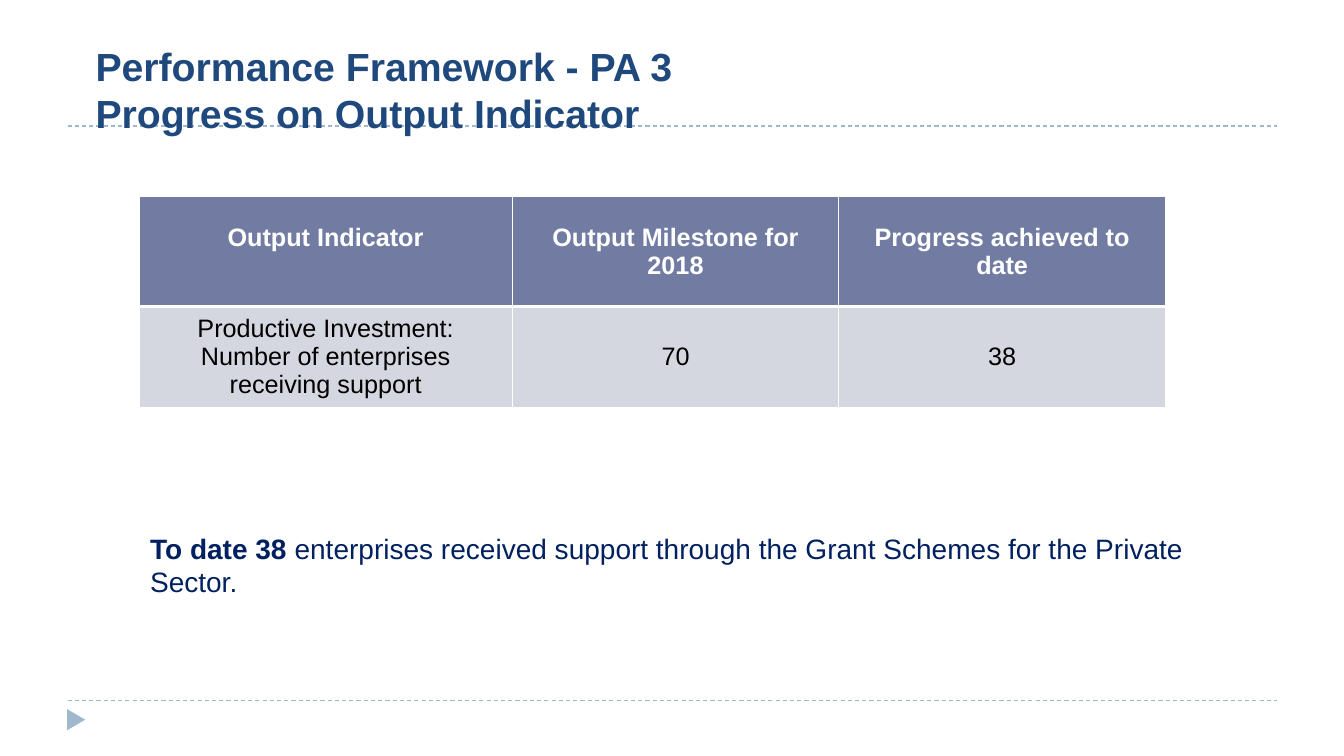
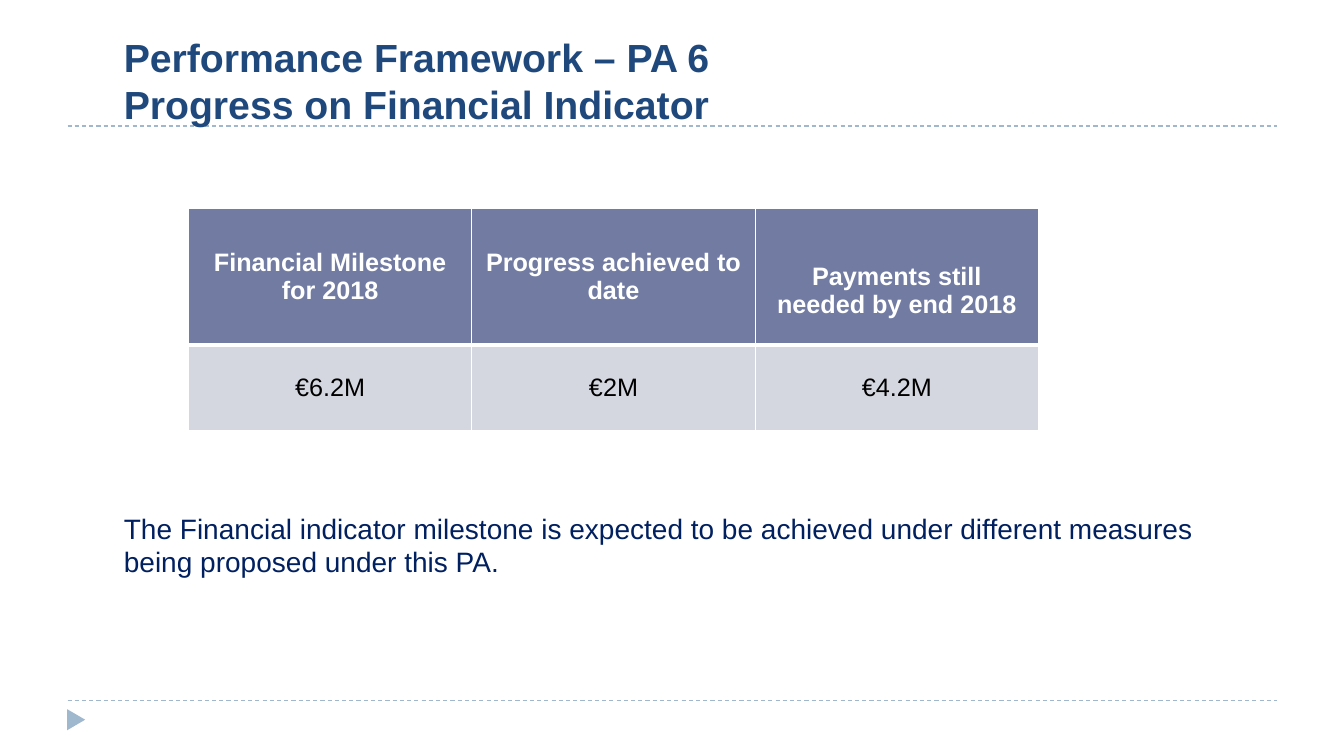
from dataclasses import dataclass

from lxml import etree
from pptx import Presentation
from pptx.dml.color import RGBColor
from pptx.enum import dml, shapes, text
from pptx.oxml import ns
from pptx.util import Inches, Pt


@dataclass(frozen=True)
class Theme:
    """Colours, font and type sizes shared by the slides."""
    font: str = "Arial"
    title: str = "1F497D"
    note: str = "002060"
    accent: str = "9FB8CD"
    header: str = "727CA3"
    row: str = "D5D7E0"
    white: str = "FFFFFF"
    black: str = "000000"
    title_size: int = 28
    note_size: int = 20
    table_size: int = 18


THEME = Theme()


def rgb(colour):
    """Turn a hex string into a colour."""
    return RGBColor.from_string(colour)


def style(paragraph, size, colour, bold=None):
    """Set the font of a whole paragraph."""
    font = paragraph.font
    font.name, font.size, font.bold = THEME.font, Pt(size), bold
    font.color.rgb = rgb(colour)


def add_rule(slide, y):
    """Draw a dashed rule across the slide."""
    rule = slide.shapes.add_connector(
        shapes.MSO_CONNECTOR.STRAIGHT,
        Inches(0.67), Inches(y), Inches(12.67), Inches(y))
    rule.line.color.rgb = rgb(THEME.accent)
    rule.line.width = Pt(0.75)
    rule.line.dash_style = dml.MSO_LINE.DASH
    etree.SubElement(rule._element.spPr, ns.qn("a:effectLst"))


def add_frame(slide):
    """Draw the rules and the corner marker that every slide has."""
    for y in (6.95, 1.25):
        add_rule(slide, y)
    marker = slide.shapes.add_shape(
        shapes.MSO_SHAPE.ISOSCELES_TRIANGLE,
        Inches(0.65), Inches(7.05), Inches(0.21), Inches(0.18))
    marker.rotation = 90
    marker.shadow.inherit = False
    marker.fill.solid()
    marker.fill.fore_color.rgb = rgb(THEME.accent)
    marker.line.fill.background()


def add_text(slide, box, anchor=text.MSO_ANCHOR.TOP):
    """Add a wrapping text box and return its first paragraph."""
    frame = slide.shapes.add_textbox(*map(Inches, box)).text_frame
    frame.word_wrap = True
    frame.vertical_anchor = anchor
    return frame.paragraphs[0]


def add_title(slide, box, subject, topic):
    """Add the two-line title."""
    title = add_text(slide, box, text.MSO_ANCHOR.BOTTOM)
    title.add_run().text = subject
    title.add_line_break()
    title.add_run().text = topic
    style(title, THEME.title_size, THEME.title, True)


def add_note(slide, box, body, lead=""):
    """Add the closing remark, with an optional bold lead."""
    note = add_text(slide, box)
    if lead:
        opening = note.add_run()
        opening.text = lead
        opening.font.bold = True
    note.add_run().text = body
    style(note, THEME.note_size, THEME.note)


def set_borders(cell, **widths):
    """Give a cell white borders, with widths in points by side."""
    properties = cell._tc.get_or_add_tcPr()
    for position, side in enumerate("LRTB"):
        border = etree.Element(
            ns.qn(f"a:ln{side}"), w=str(Pt(widths.get(side, 1))))
        fill = etree.SubElement(border, ns.qn("a:solidFill"))
        etree.SubElement(fill, ns.qn("a:srgbClr"), val=THEME.white)
        properties.insert(position, border)


def add_indicators(slide, left, top, widths, heights, rows):
    """Add a table with a header row and return it."""
    table = slide.shapes.add_table(
        len(rows), len(widths), Inches(left), Inches(top),
        Inches(sum(widths)), Inches(sum(heights))).table
    table.horz_banding = False
    for column, width in zip(table.columns, widths):
        column.width = Inches(width)
    for index, (row, height, values) in enumerate(zip(table.rows, heights, rows)):
        row.height = Inches(height)
        is_header = index == 0
        for cell, value in zip(row.cells, values):
            cell.text = value
            cell.vertical_anchor = text.MSO_ANCHOR.MIDDLE
            cell.fill.solid()
            cell.fill.fore_color.rgb = rgb(THEME.header if is_header else THEME.row)
            set_borders(cell, **({"B": 3} if is_header else {"T": 3}))
            label = cell.text_frame.paragraphs[0]
            label.alignment = text.PP_ALIGN.CENTER
            style(label, THEME.table_size,
                  THEME.white if is_header else THEME.black, is_header)
    return table


def add_slide(deck):
    """Add a blank slide with the shared frame."""
    slide = deck.slides.add_slide(deck.slide_layouts[6])
    add_frame(slide)
    return slide


def build_output(deck):
    """Build the slide on the output indicator."""
    slide = add_slide(deck)
    add_title(slide, (0.85, 0.94, 7.83, 0.46),
              "Performance Framework - PA 3", "Progress on Output Indicator")
    table = add_indicators(
        slide, 1.38, 1.95, (3.7, 3.24, 3.24), (1.09, 0.95),
        [("Output Indicator", "Output Milestone for 2018",
          "Progress achieved to date"),
         ("Productive Investment: Number of enterprises receiving support",
          "70", "38")])
    table.cell(0, 0).margin_bottom = Inches(0.33)
    add_note(slide, (1.39, 5.22, 11.22, 0.76),
             " enterprises received support through the Grant Schemes "
             "for the Private Sector.", lead="To date 38")


def build_financial(deck):
    """Build the slide on the financial indicator."""
    slide = add_slide(deck)
    add_title(slide, (1.13, 0.81, 7.74, 0.5),
              "Performance Framework – PA 6", "Progress on Financial Indicator")
    table = add_indicators(
        slide, 1.87, 2.07, (2.81,) * 3, (1.35, 0.85),
        [("Financial Milestone for 2018", "Progress achieved to date",
          "Payments still needed by end 2018"),
         ("€6.2M", "€2M", "€4.2M")])
    table.cell(0, 2).margin_top = Inches(0.33)
    add_note(slide, (1.13, 5.02, 11.32, 1.08),
             "The Financial indicator milestone is expected to be achieved "
             "under different measures being proposed under this PA.")


def main():
    """Build and save the deck."""
    deck = Presentation()
    deck.slide_width, deck.slide_height = Inches(13.33), Inches(7.5)
    build_output(deck)
    build_financial(deck)
    deck.save("out.pptx")


if __name__ == "__main__":
    main()
